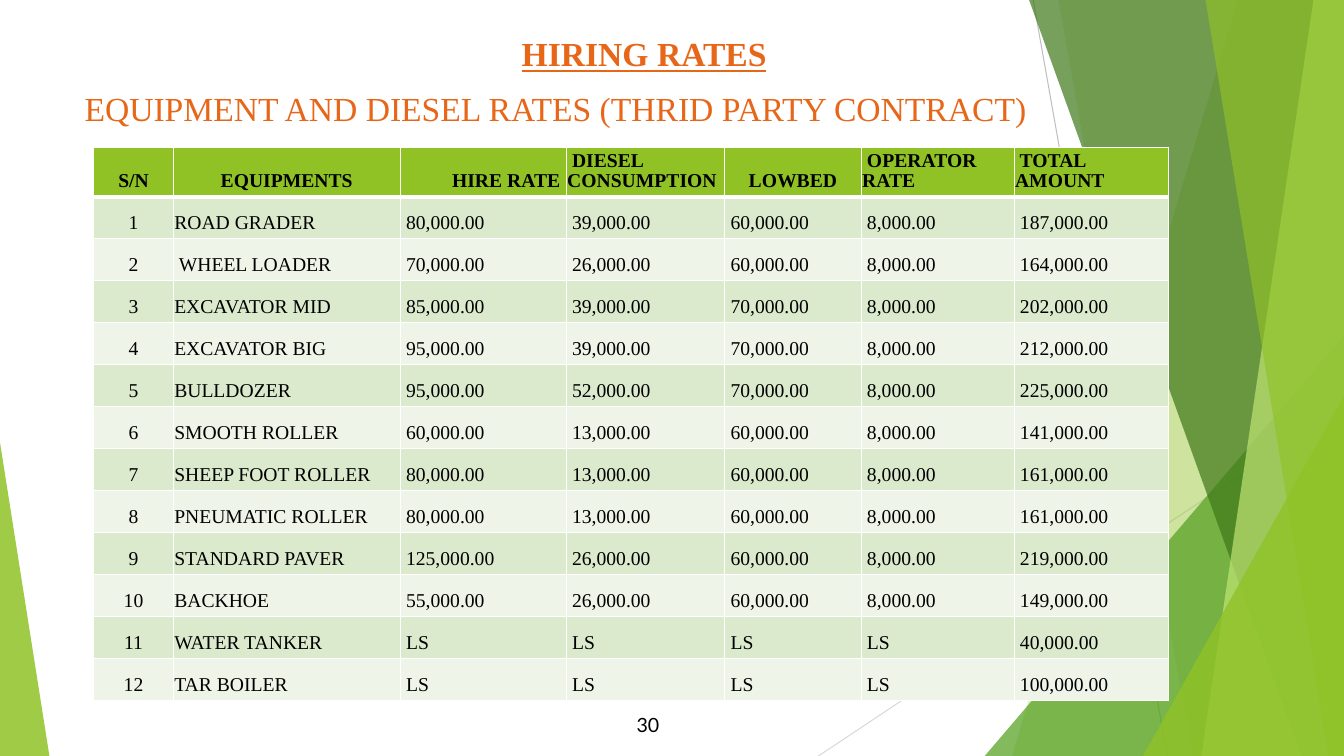
from dataclasses import dataclass
from typing import Optional

from lxml.etree import SubElement
from pptx import Presentation
from pptx.dml.color import RGBColor
from pptx.enum.shapes import MSO_CONNECTOR, MSO_SHAPE
from pptx.enum.text import MSO_ANCHOR, PP_ALIGN
from pptx.oxml.ns import qn
from pptx.util import Pt

WIDTH, HEIGHT = 960, 540
SERIF = "Times New Roman"
LIME, ORANGE, BLACK, WHITE = "90C226", "E76618", "000000", "FFFFFF"
BANDS = ("DBE9CD", "EEF4E8")
LEFT, CENTER, RIGHT = PP_ALIGN.LEFT, PP_ALIGN.CENTER, PP_ALIGN.RIGHT


@dataclass
class Ray:
    start: tuple[float, float]
    end: tuple[float, float]
    color: str


@dataclass
class Facet:
    """A panel from a slanted left edge to the right edge of the slide."""
    top_x: float
    bottom_x: float
    color: str
    opacity: int


@dataclass
class Triangle:
    """A right triangle standing on the bottom edge; apex is 0 (left) or 1 (right)."""
    left: float
    top: float
    width: float
    apex: int
    color: str
    opacity: int


@dataclass
class Column:
    header: str
    width: float
    header_align: PP_ALIGN
    align: PP_ALIGN = LEFT


@dataclass
class Rate:
    equipment: str
    hire: Optional[int]
    diesel: Optional[int]
    lowbed: Optional[int]
    operator: Optional[int]
    total: int


RAYS = [
    Ray((738, 0), (833.8, 540), "BFBFBF"),
    Ray((960, 290.2), (584.6, 540), "D9D9D9"),
]
PANELS = [
    Facet(884.2, 722.9, LIME, 30),
    Facet(756, 851.8, LIME, 20),
    Triangle(703.4, 239.8, 256.6, 1, "54A021", 72),
    Facet(735.1, 929.5, "3F7819", 70),
    Facet(938.2, 858.2, "C0E474", 70),
    Facet(861.1, 949, LIME, 65),
    Triangle(816.5, 283, 143.5, 1, LIME, 80),
    Triangle(0, 316.1, 35.3, 0, LIME, 85),
]
COLUMNS = [
    Column("S/N", 56.8, CENTER, CENTER),
    Column("EQUIPMENTS", 162.1, CENTER),
    Column(" HIRE RATE ", 118.6, RIGHT),
    Column(" DIESEL CONSUMPTION", 113.2, LEFT),
    Column(" LOWBED ", 97.5, CENTER),
    Column(" OPERATOR RATE", 109.3, LEFT),
    Column(" TOTAL AMOUNT", 110, LEFT),
]
RATES = [
    Rate("ROAD GRADER", 80000, 39000, 60000, 8000, 187000),
    Rate(" WHEEL LOADER", 70000, 26000, 60000, 8000, 164000),
    Rate("EXCAVATOR MID", 85000, 39000, 70000, 8000, 202000),
    Rate("EXCAVATOR BIG", 95000, 39000, 70000, 8000, 212000),
    Rate("BULLDOZER", 95000, 52000, 70000, 8000, 225000),
    Rate("SMOOTH ROLLER", 60000, 13000, 60000, 8000, 141000),
    Rate("SHEEP FOOT ROLLER", 80000, 13000, 60000, 8000, 161000),
    Rate("PNEUMATIC ROLLER", 80000, 13000, 60000, 8000, 161000),
    Rate("STANDARD PAVER", 125000, 26000, 60000, 8000, 219000),
    Rate("BACKHOE", 55000, 26000, 60000, 8000, 149000),
    Rate("WATER TANKER", None, None, None, None, 40000),
    Rate("TAR BOILER", None, None, None, None, 100000),
]


def set_color(fmt, color: str) -> None:
    """Color a fill, or the fill of a line or font."""
    fmt.solid()
    fmt.fore_color.rgb = RGBColor.from_string(color)


def style_run(r, size: float, font: str, color: str, bold: bool = False) -> None:
    r.font.size, r.font.name, r.font.bold = Pt(size), font, bold
    set_color(r.font.fill, color)


def draw_ray(s, ray: Ray) -> None:
    points = [Pt(v) for v in (*ray.start, *ray.end)]
    line = s.shapes.add_connector(MSO_CONNECTOR.STRAIGHT, *points)
    line.line.width = Pt(0.75)
    set_color(line.line.fill, ray.color)
    SubElement(line._element.spPr, qn("a:effectLst"))


def draw_panel(s, panel: Facet | Triangle) -> None:
    if isinstance(panel, Facet):
        corners = [(WIDTH, 0), (WIDTH, HEIGHT), (panel.bottom_x, HEIGHT)]
        builder = s.shapes.build_freeform(Pt(panel.top_x), Pt(0))
        builder.add_line_segments([(Pt(x), Pt(y)) for x, y in corners])
        sp = builder.convert_to_shape()
    else:
        sp = s.shapes.add_shape(
            MSO_SHAPE.ISOSCELES_TRIANGLE, Pt(panel.left), Pt(panel.top),
            Pt(panel.width), Pt(HEIGHT - panel.top))
        sp.adjustments[0] = panel.apex
    sp.shadow.inherit = False
    sp.line.fill.background()
    set_color(sp.fill, panel.color)
    color = sp._element.spPr.find(qn("a:solidFill"))[0]
    SubElement(color, qn("a:alpha"), val=str(panel.opacity * 1000))


def add_text_frame(s, left: float, top: float, width: float, height: float):
    tf = s.shapes.add_textbox(Pt(left), Pt(top), Pt(width), Pt(height)).text_frame
    tf.word_wrap = True
    return tf


def draw_headings(s) -> None:
    tf = add_text_frame(s, 53.3, 20.2, 795.6, 483.1)
    tf.text = "HIRING RATES\nEQUIPMENT AND DIESEL RATES (THRID PARTY CONTRACT)"
    title, subtitle = tf.paragraphs
    for p in (title, subtitle):
        p.space_before = Pt(10)
        style_run(p.runs[0], 24, SERIF, ORANGE, bold=p is title)
    title.alignment = CENTER
    title.runs[0].font.underline = True
    title._p.get_or_add_pPr().set("marL", str(Pt(18)))


def draw_page_number(s) -> None:
    tf = add_text_frame(s, 424.1, 503.3, 54, 28.8)
    tf.vertical_anchor = MSO_ANCHOR.MIDDLE
    tf.text = "30"
    tf.paragraphs[0].alignment = RIGHT
    style_run(tf.paragraphs[0].runs[0], 14, "Lato", BLACK)


def set_borders(cell, bottom: float) -> None:
    tcPr = cell._tc.get_or_add_tcPr()
    widths = {"a:lnL": 1, "a:lnR": 1, "a:lnT": 1, "a:lnB": bottom}
    for i, (tag, width) in enumerate(widths.items()):
        ln = tcPr.makeelement(qn(tag), {"w": str(Pt(width))})
        SubElement(SubElement(ln, qn("a:solidFill")), qn("a:srgbClr"), val=WHITE)
        tcPr.insert(i, ln)


def fill_cell(cell, text: str, align: PP_ALIGN, fill: str, header: bool) -> None:
    cell.margin_left = cell.margin_top = cell.margin_right = Pt(0.7)
    cell.margin_bottom = Pt(3.6)
    cell.vertical_anchor = MSO_ANCHOR.BOTTOM
    set_color(cell.fill, fill)
    set_borders(cell, bottom=3 if header else 1)
    p = cell.text_frame.paragraphs[0]
    p.text = text
    p.alignment = align
    p.line_spacing = 0.93
    style_run(p.runs[0], 14, SERIF, BLACK, bold=header)


def draw_rates(s) -> None:
    n_rows = len(RATES) + 1
    table = s.shapes.add_table(
        n_rows, len(COLUMNS), Pt(67), Pt(105.1),
        Pt(sum(c.width for c in COLUMNS)), Pt(30 * n_rows)).table
    for j, column in enumerate(COLUMNS):
        table.columns[j].width = Pt(column.width)
        fill_cell(table.cell(0, j), column.header, column.header_align, LIME, True)
    for i, rate in enumerate(RATES, start=1):
        amounts = (rate.hire, rate.diesel, rate.lowbed, rate.operator, rate.total)
        texts = [str(i), rate.equipment]
        texts += [" LS" if a is None else f" {a:,.2f}" for a in amounts]
        for j, text in enumerate(texts):
            fill_cell(table.cell(i, j), text, COLUMNS[j].align, BANDS[(i - 1) % 2], False)


def main() -> None:
    prs = Presentation()
    prs.slide_width, prs.slide_height = Pt(WIDTH), Pt(HEIGHT)
    s = prs.slides.add_slide(prs.slide_layouts[6])
    for ray in RAYS:
        draw_ray(s, ray)
    for panel in PANELS:
        draw_panel(s, panel)
    draw_headings(s)
    draw_page_number(s)
    draw_rates(s)
    prs.save("out.pptx")


if __name__ == "__main__":
    main()
